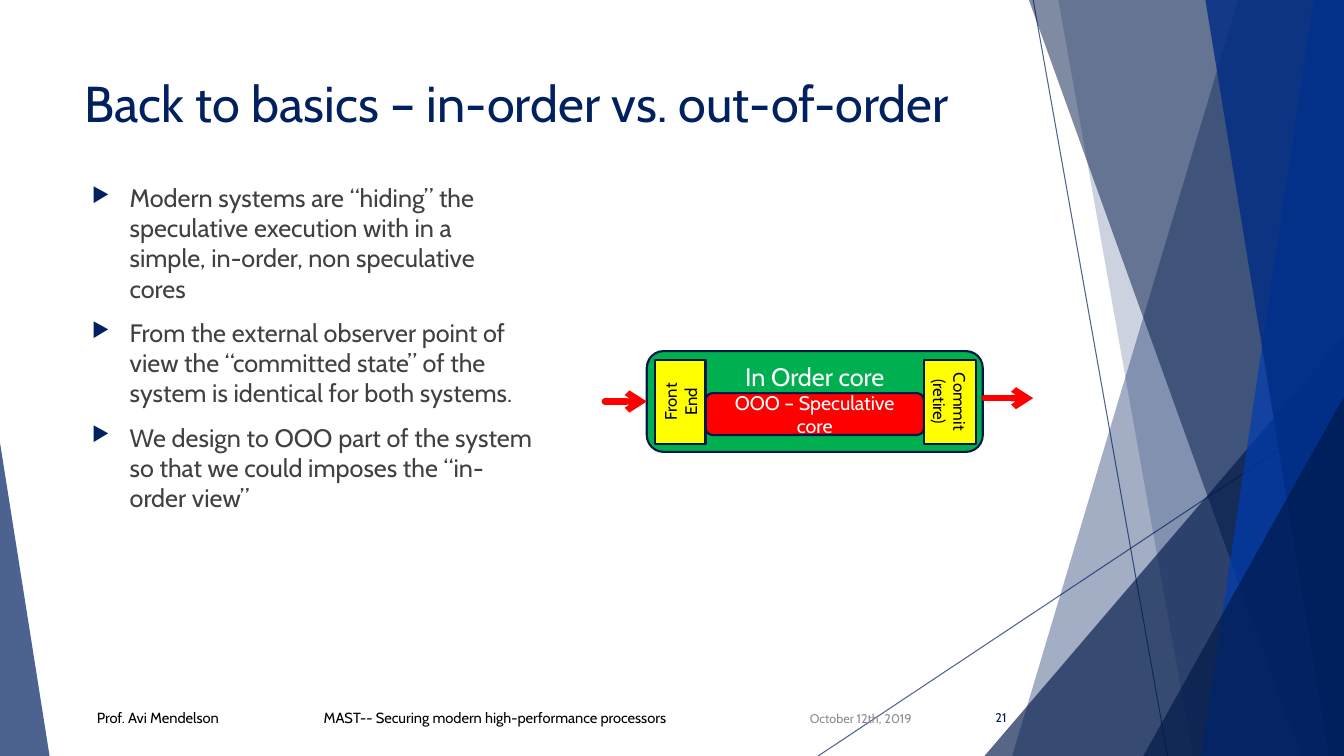
from dataclasses import dataclass, field
from typing import Any

import pptx
import pptx.dml.color
import pptx.enum.shapes
import pptx.enum.text
import pptx.oxml
import pptx.oxml.ns
import pptx.util

COLUMNS, ROWS = 160, 90
CELL = 76200  # one grid cell is a twelfth of an inch
NAVY, DEEP_NAVY, EDGE = "002060", "001848", "001847"
ALIGN = pptx.enum.text.PP_ALIGN
ANCHOR = pptx.enum.text.MSO_ANCHOR
PRESET = pptx.enum.shapes.MSO_SHAPE


@dataclass
class Shard:
    """Background panel reaching the right edge; top and bottom are its left corners."""
    top: float
    bottom: float
    color: str
    opacity: int


@dataclass
class Wedge:
    """Right-angled triangle standing on the bottom edge."""
    left: float
    top: float
    width: float
    peak: int
    color: str
    opacity: int


@dataclass
class Label:
    text: str
    box: tuple[float, float, float, float]
    size: float
    color: str
    align: Any = ALIGN.LEFT
    frame: dict[str, Any] = field(default_factory=dict)


@dataclass
class Block:
    label: Label
    preset: Any
    fill: str
    turn: str = "horz"


BACKDROP = [
    Shard(147.4, 120.5, NAVY, 36),
    Shard(126, 142, NAVY, 20),
    Wedge(117.2, 40, 42.8, 1, DEEP_NAVY, 66),
    Shard(122.5, 154.9, DEEP_NAVY, 50),
    Shard(156.4, 143, "003BB0", 70),
    Shard(143.5, 158.2, "002C84", 80),
    Wedge(136.1, 47.2, 23.9, 1, DEEP_NAVY, 66),
    Wedge(0, 52.7, 5.9, 0, NAVY, 70),
]
BACKDROP_LINES = [(123, 0, 139, 90), (160, 48.4, 97.4, 90)]

MIDDLE = {"vertical_anchor": ANCHOR.MIDDLE}
TITLE = Label("Back to basics – in-order vs. out-of-order", (8.9, 8, 112.8, 17.3), 36, NAVY)
POINTS = Label(
    "Modern systems are “hiding” the speculative execution with in a simple, "
    "in-order, non speculative cores\n"
    "From the external observer point of view the “committed state” of the "
    "system is identical for both systems.\n"
    "We design to OOO part of the system so that we could imposes the “in-order view”",
    (9.75, 21.1, 54.8, 58.2), 18, "404040")
FOOTERS = [
    Label("Prof. Avi Mendelson", (10.35, 83.8, 24, 3.8), 10.5, "000000"),
    Label("MAST-- Securing modern high-performance processors", (37.35, 83.8, 52, 3.8),
          10.5, "000000"),
    Label("October 12th, 2019", (89.9, 83.1, 19.8, 4.8), 9, "8C8C8C", ALIGN.RIGHT, MIDDLE),
    Label("21", (112, 83, 9, 4.8), 9, NAVY, ALIGN.RIGHT, MIDDLE),
]

IN_ORDER_CORE = Block(Label("In Order core", (77, 41.8, 40, 12), 18, "FFFFFF", ALIGN.CENTER),
                      PRESET.ROUNDED_RECTANGLE, "00B050")
SPECULATIVE_CORE = Block(Label("OOO – Speculative core", (84, 46.8, 26, 5), 14, "FFFFFF",
                               ALIGN.CENTER, MIDDLE), PRESET.ROUNDED_RECTANGLE, "FF0000")
FRONT_END = Block(Label("Front End", (78, 42.85, 6, 10), 12, "000000", ALIGN.CENTER, MIDDLE),
                  PRESET.RECTANGLE, "FFFF00", "vert270")
COMMIT = Block(Label("Commit\n(retire)", (110, 42.85, 6.2, 10), 12, "000000", ALIGN.CENTER, MIDDLE),
               PRESET.RECTANGLE, "FFFF00", "vert")
FLOW_ARROWS = [(72, 47.8, 77, 47.8), (117.2, 47.4, 123, 47.4)]


def cells(*counts: float) -> list[int]:
    return [round(count * CELL) for count in counts]


def apply(target: Any, values: dict[str, Any]) -> None:
    for attribute, value in values.items():
        setattr(target, attribute, value)


def paint(color_format: Any, color: str, opacity: int = 100) -> None:
    """Paint a fill or a line's fill with a hex colour."""
    color_format.solid()
    color_format.fore_color.rgb = pptx.dml.color.RGBColor.from_string(color)
    if opacity < 100:
        hue = next(color_format._xPr.iter(pptx.oxml.ns.qn("a:srgbClr")))
        add_xml(hue, f'<a:alpha val="{opacity * 1000}" {{ns}}/>')


def add_xml(parent: Any, markup: str) -> None:
    parent.append(pptx.oxml.parse_xml(markup.format(ns=pptx.oxml.ns.nsdecls("a"))))


def write(shape: Any, label: Label, bulleted: bool = False) -> None:
    frame = shape.text_frame
    apply(frame, {"word_wrap": True, "vertical_anchor": ANCHOR.TOP, **label.frame})
    frame.text = label.text
    for index, paragraph in enumerate(frame.paragraphs):
        paragraph.alignment = label.align
        if bulleted:
            add_bullet(paragraph)
            if index:
                paragraph.space_before = pptx.util.Pt(10)
        apply(paragraph.font, {"name": "Cabin", "size": pptx.util.Pt(label.size)})
        paragraph.font.color.rgb = pptx.dml.color.RGBColor.from_string(label.color)


def add_bullet(paragraph: Any) -> None:
    properties = paragraph._p.get_or_add_pPr()
    properties.set("marL", "342900")
    properties.set("indent", "-342900")
    for markup in (f'<a:buClr {{ns}}><a:srgbClr val="{NAVY}"/></a:buClr>',
                   '<a:buSzPct val="80000" {ns}/>',
                   '<a:buFont typeface="OpenSymbol" {ns}/>',
                   '<a:buChar char="▶" {ns}/>'):
        add_xml(properties, markup)


def draw_label(shapes: Any, label: Label, bulleted: bool = False) -> Any:
    box = shapes.add_textbox(*cells(*label.box))
    write(box, label, bulleted)
    return box


def draw_panel(shapes: Any, part: Shard | Wedge) -> None:
    if isinstance(part, Shard):
        corners = [(part.top, 0), (COLUMNS, 0), (COLUMNS, ROWS), (part.bottom, ROWS)]
        start, *others = [tuple(cells(*corner)) for corner in corners]
        builder = shapes.build_freeform(*start, scale=1.0)
        builder.add_line_segments(others, close=True)
        panel = builder.convert_to_shape()
    else:
        panel = shapes.add_shape(PRESET.ISOSCELES_TRIANGLE, *cells(
            part.left, part.top, part.width, ROWS - part.top))
        panel.adjustments[0] = part.peak
    panel.shadow.inherit = False
    paint(panel.fill, part.color, part.opacity)
    panel.line.fill.background()


def draw_line(shapes: Any, ends: tuple[float, ...], color: str, width: float,
              opacity: int = 100, arrow: bool = False) -> None:
    line = shapes.add_connector(pptx.enum.shapes.MSO_CONNECTOR.STRAIGHT, *cells(*ends))
    line.line.width = pptx.util.Pt(width)
    paint(line.line.fill, color, opacity)
    if arrow:
        stroke = line.line._get_or_add_ln()
        stroke.set("cap", "rnd")
        add_xml(stroke, '<a:tailEnd type="arrow" {ns}/>')
    add_xml(line._element.spPr, "<a:effectLst {ns}/>")


def draw_block(shapes: Any, block: Block) -> None:
    shape = shapes.add_shape(block.preset, *cells(*block.label.box))
    shape.shadow.inherit = False
    paint(shape.fill, block.fill)
    paint(shape.line.fill, EDGE)
    shape.line.width = pptx.util.Pt(1.5)
    write(shape, block.label)
    shape.text_frame._txBody.bodyPr.set("vert", block.turn)


def main() -> None:
    deck = pptx.Presentation()
    apply(deck, {"slide_width": COLUMNS * CELL, "slide_height": ROWS * CELL})
    shapes = deck.slides.add_slide(deck.slide_layouts[6]).shapes

    # Backdrop
    for ends in BACKDROP_LINES:
        draw_line(shapes, ends, NAVY, 0.75, opacity=70)
    for part in BACKDROP:
        draw_panel(shapes, part)

    # Title, points and footer
    paint(draw_label(shapes, TITLE).fill, "FFFFFF")
    draw_label(shapes, POINTS, bulleted=True)
    for footer in FOOTERS:
        draw_label(shapes, footer)

    # Processor diagram
    for block in (IN_ORDER_CORE, SPECULATIVE_CORE):
        draw_block(shapes, block)
    for ends in FLOW_ARROWS:
        draw_line(shapes, ends, "FF0000", 4.5, arrow=True)
    for block in (FRONT_END, COMMIT):
        draw_block(shapes, block)

    deck.save("out.pptx")


if __name__ == "__main__":
    main()
